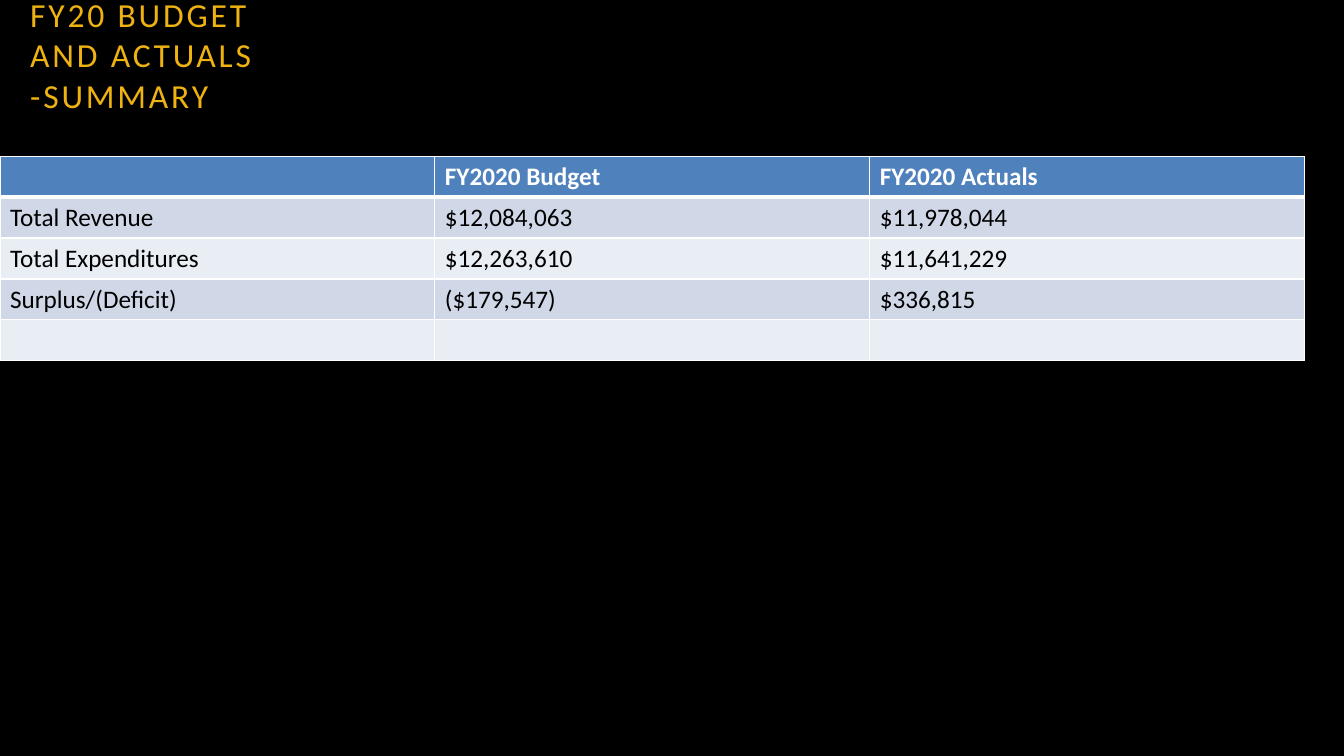
from copy import deepcopy
from dataclasses import dataclass

from lxml import etree
from pptx import Presentation
from pptx.dml.color import RGBColor
from pptx.enum.text import MSO_ANCHOR, MSO_AUTO_SIZE, PP_ALIGN
from pptx.oxml.ns import qn
from pptx.util import Inches, Pt

LEFT, MIDDLE, TOP = PP_ALIGN.LEFT, MSO_ANCHOR.MIDDLE, MSO_ANCHOR.TOP
NO_FIT = MSO_AUTO_SIZE.NONE
TITLE_ONLY = 5


@dataclass(frozen=True)
class Theme:
    font: str = "Calibri"
    background: str = "000000"
    title: str = "EEB211"
    header: str = "4F81BD"
    bands: tuple = ("D0D8E8", "E9EDF4")
    rule: str = "FFFFFF"
    header_text: str = "FFFFFF"
    body_text: str = "000000"
    title_size: int = 24
    table_size: int = 18
    title_spacing: int = 2
    thin: int = 1
    thick: int = 3


THEME = Theme()
TITLE_LINES = ["FY20 BUDGET ", "AND ACTUALS", "-SUMMARY"]
BUDGET_ROWS = [
    ["", "FY2020 Budget", "FY2020 Actuals"],
    ["Total Revenue", "$12,084,063", "$11,978,044"],
    ["Total Expenditures", "$12,263,610", "$11,641,229"],
    ["Surplus/(Deficit)", "($179,547)", "$336,815"],
    ["", "", ""],
]


def paint(fill, color):
    fill.solid()
    fill.fore_color.rgb = RGBColor.from_string(color)


def write(frame, lines, *, size, color, bold=False, spacing=0):
    """Write lines into one paragraph, parted by line breaks."""
    paragraph = frame.paragraphs[0]
    paragraph.alignment = LEFT
    for number, line in enumerate(lines):
        if number:
            paragraph.add_line_break()
        run = paragraph.add_run()
        run.text = line
        run.font.name = THEME.font
        run.font.size = Pt(size)
        run.font.bold = bold
        run.font.color.rgb = RGBColor.from_string(color)
        properties = run.font._element
        if spacing:
            properties.set("spc", str(spacing * 100))
        # Breaks take the format of the text, so line heights stay even
        if number:
            run._r.getprevious().append(deepcopy(properties))


def add_borders(cell, bottom):
    properties = cell._tc.get_or_add_tcPr()
    widths = {"lnL": THEME.thin, "lnR": THEME.thin, "lnT": THEME.thin, "lnB": bottom}
    for position, (side, width) in enumerate(widths.items()):
        line = etree.Element(qn(f"a:{side}"), w=str(Pt(width)))
        fill = etree.SubElement(line, qn("a:solidFill"))
        etree.SubElement(fill, qn("a:srgbClr"), val=THEME.rule)
        properties.insert(position, line)


def place_title(title, left, top, width, height):
    title.left, title.top, title.width, title.height = left, top, width, height
    paint(title.fill, THEME.background)
    frame = title.text_frame
    frame.word_wrap = True
    frame.auto_size = NO_FIT
    frame.vertical_anchor = MIDDLE
    frame.margin_left, frame.margin_right = Inches(0.3), Inches(0.1)
    frame.margin_top = frame.margin_bottom = Inches(0.05)
    write(frame, TITLE_LINES, size=THEME.title_size, color=THEME.title,
          spacing=THEME.title_spacing)


def place_budget_table(slide, left, top, width, height):
    row_count, column_count = len(BUDGET_ROWS), len(BUDGET_ROWS[0])
    table = slide.shapes.add_table(row_count, column_count, left, top, width, height).table
    for row_number, values in enumerate(BUDGET_ROWS):
        is_header = row_number == 0
        fill = THEME.header if is_header else THEME.bands[(row_number - 1) % 2]
        text_color = THEME.header_text if is_header else THEME.body_text
        for column, value in enumerate(values):
            cell = table.cell(row_number, column)
            paint(cell.fill, fill)
            cell.vertical_anchor = TOP
            add_borders(cell, THEME.thick if is_header else THEME.thin)
            # The rule under the header is shared with the first body row
            if row_number == 1:
                cell._tc.tcPr.find(qn("a:lnT")).set("w", str(Pt(THEME.thick)))
            if value:
                write(cell.text_frame, [value], size=THEME.table_size,
                      color=text_color, bold=is_header)


def main():
    deck = Presentation()
    deck.slide_width, deck.slide_height = Inches(13.33), Inches(7.5)
    slide = deck.slides.add_slide(deck.slide_layouts[TITLE_ONLY])
    paint(slide.background.fill, THEME.background)

    # Budget against actuals
    place_budget_table(slide, 0, Inches(1.55), Inches(12.94), Inches(2.03))
    # Heading in the top left corner
    place_title(slide.shapes.title, 0, 0, Inches(3), Inches(1.08))

    deck.save("out.pptx")


if __name__ == "__main__":
    main()
